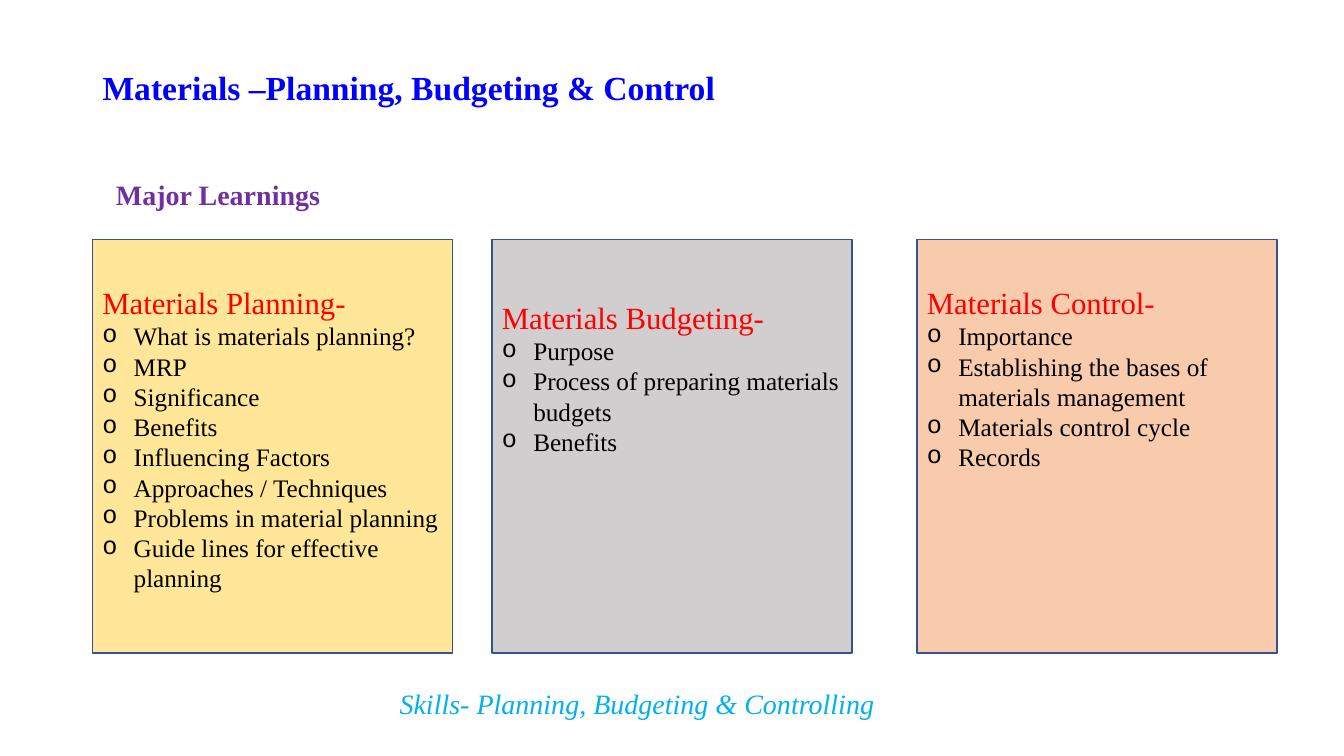
from lxml import etree
from pptx import Presentation
from pptx.dml.color import RGBColor
from pptx.enum.shapes import MSO_SHAPE
from pptx.enum.text import MSO_ANCHOR, PP_ALIGN
from pptx.oxml.ns import qn
from pptx.util import Cm, Pt

RECT = MSO_SHAPE.RECTANGLE
TOP, MIDDLE = MSO_ANCHOR.TOP, MSO_ANCHOR.MIDDLE
LEFT = PP_ALIGN.LEFT

# Content
TITLE = "Materials –Planning, Budgeting & Control"
SUBTITLE = "Major Learnings"
SKILLS = "Skills- Planning, Budgeting & Controlling"
CARDS = [  # heading, topics, fill, left and top inset in cm
    ("Materials Planning-",
     ["What is materials planning?", "MRP", "Significance", "Benefits",
      "Influencing Factors", "Approaches / Techniques",
      "Problems in material planning", "Guide lines for effective planning"],
     "FFE699", 2.33, 1.11),
    ("Materials Budgeting-",
     ["Purpose", "Process of preparing materials budgets", "Benefits"],
     "D0CECE", 12.4, 1.48),
    ("Materials Control-",
     ["Importance", "Establishing the bases of materials management",
      "Materials control cycle", "Records"],
     "F8CBAD", 23.11, 1.11),
]

# Theme: text styles are size, colour, bold, italic
THEME = {
    "font": "Times New Roman",
    "bullet_font": "Courier New",
    "line": "325491",
    "title": (24, "0000FF", True, False),
    "subtitle": (20, "7030A0", True, False),
    "heading": (22, "FF0000", False, False),
    "topic": (18, "000000", False, False),
    "skills": (20, "00B0F0", False, True),
}
CARD_TOP, CARD_W, CARD_H = Cm(6.04), Cm(9.07), Cm(10.42)
NOTE_W, NOTE_H = Cm(16.94), Cm(1.11)
INDENT = Cm(0.79)


def write(p, text, style):
    size, color, bold, italic = THEME[style]
    p.alignment = LEFT
    r = p.add_run()
    r.text = text
    formats = {"name": THEME["font"], "size": Pt(size), "bold": bold, "italic": italic}
    for name, value in formats.items():
        setattr(r.font, name, value)
    r.font.color.rgb = RGBColor.from_string(color)


def add_bullet(p):
    pPr = p._p.get_or_add_pPr()
    pPr.set("marL", str(INDENT))
    pPr.set("indent", str(-INDENT))
    etree.SubElement(pPr, qn("a:buFont")).set("typeface", THEME["bullet_font"])
    etree.SubElement(pPr, qn("a:buChar")).set("char", "o")


def add_note(s, text, style, left, top):
    tf = s.shapes.add_textbox(left, top, NOTE_W, NOTE_H).text_frame
    tf.word_wrap = True
    write(tf.paragraphs[0], text, style)


def add_card(s, heading, topics, fill, left, inset):
    sp = s.shapes.add_shape(RECT, Cm(left), CARD_TOP, CARD_W, CARD_H)
    sp.shadow.inherit = False
    sp.fill.solid()
    sp.fill.fore_color.rgb = RGBColor.from_string(fill)
    sp.line.color.rgb = RGBColor.from_string(THEME["line"])
    sp.line.width = Pt(1)
    tf = sp.text_frame
    tf.word_wrap = True
    tf.vertical_anchor = TOP
    tf.margin_top = Cm(inset)
    write(tf.paragraphs[0], heading, "heading")
    for topic in topics:
        p = tf.add_paragraph()
        write(p, topic, "topic")
        add_bullet(p)


def main():
    prs = Presentation()
    prs.slide_width, prs.slide_height = Cm(33.87), Cm(19.05)
    s = prs.slides.add_slide(prs.slide_layouts[5])

    # Title
    title = s.shapes.title
    title.left, title.top, title.width, title.height = Cm(2.33), Cm(1.01), Cm(29.21), Cm(2.51)
    title.text_frame.vertical_anchor = MIDDLE
    p = title.text_frame.paragraphs[0]
    p.line_spacing = 0.9
    write(p, TITLE, "title")

    # Topic cards
    for card in CARDS:
        add_card(s, *card)

    # Lines above and below the cards
    add_note(s, SUBTITLE, "subtitle", Cm(2.67), Cm(4.34))
    add_note(s, SKILLS, "skills", Cm(9.82), Cm(17.17))

    prs.save("out.pptx")


if __name__ == "__main__":
    main()
